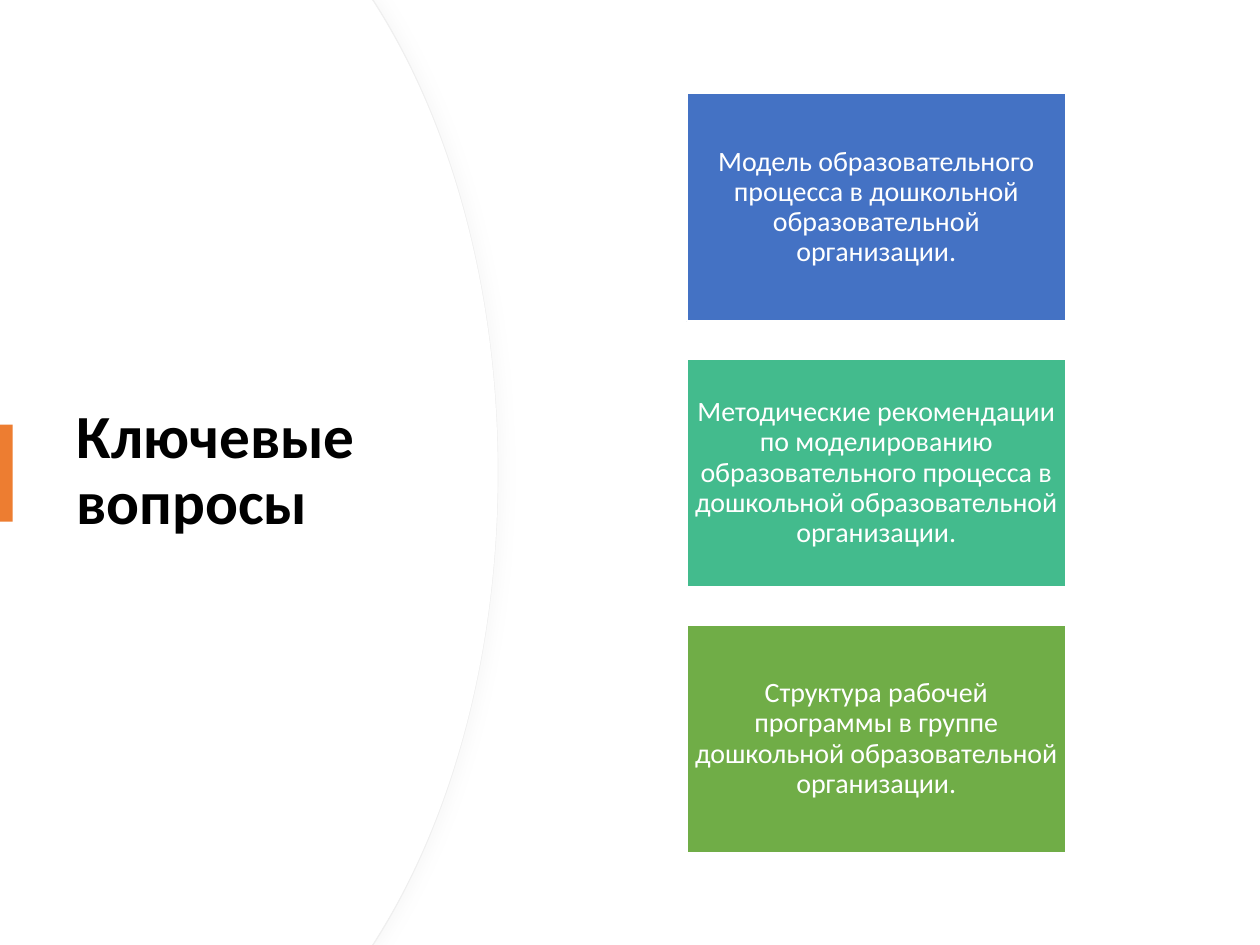
from lxml import etree
from pptx import Presentation
from pptx.dml.color import RGBColor
from pptx.enum.shapes import MSO_SHAPE as Shape
from pptx.enum.text import MSO_ANCHOR as Anchor, PP_ALIGN as Align
from pptx.oxml.ns import qn
from pptx.util import Inches, Pt

COLORS = {
    "white": "FFFFFF", "black": "000000", "outline": "EFEFEF", "shadow": "D9D9D9",
    "accent": "ED7D31", "blue": "4472C4", "teal": "43BB8D", "green": "70AD47",
}
FONT = "Calibri"
TITLE = "Ключевые вопросы"
QUESTIONS = [
    ("Модель образовательного процесса в дошкольной образовательной организации.", "blue"),
    ("Методические рекомендации по моделированию образовательного процесса "
     "в дошкольной образовательной организации.", "teal"),
    ("Структура рабочей программы в группе дошкольной образовательной организации.", "green"),
]
CARD_LEFT, CARD_TOP, CARD_WIDTH, CARD_HEIGHT, CARD_PITCH = 5.45, 0.74, 3.01, 1.81, 2.11
# Control points of the panel's two curved segments, by position in the outline
CURVES = {1: [(3.59, 1.02), (3.95, 2.32)], 2: [(3.95, 5.18), (3.59, 6.48)]}


def color(name):
    return RGBColor.from_string(COLORS[name])


def paint(shape, fill, line=None, width=1):
    shape.shadow.inherit = False
    shape.fill.solid()
    shape.fill.fore_color.rgb = color(fill)
    if line:
        shape.line.color.rgb = color(line)
        shape.line.width = Pt(width)
    else:
        shape.line.fill.background()


def write(shape, text, size, font_color, align, margins=None, bold=False):
    frame = shape.text_frame
    frame.word_wrap = True
    frame.vertical_anchor = Anchor.MIDDLE
    if margins is not None:
        frame.margin_left = frame.margin_right = Inches(margins)
        frame.margin_top = frame.margin_bottom = Inches(margins)
    paragraph = frame.paragraphs[0]
    paragraph.alignment = align
    paragraph.line_spacing = 0.9
    run = paragraph.add_run()
    run.text = text
    run.font.name = FONT
    run.font.size = Pt(size)
    run.font.bold = bold
    run.font.color.rgb = color(font_color)


def add_curved_panel(slide, edge):
    shoulder = edge + 0.05
    points = [(edge, 0), (shoulder, 0.08), (3.95, 3.75), (shoulder, 7.42),
              (edge, 7.5), (0, 7.5)]
    builder = slide.shapes.build_freeform(0, 0)
    builder.add_line_segments([(Inches(x), Inches(y)) for x, y in points], close=True)
    panel = builder.convert_to_shape()

    # Bend the two long segments into cubic curves
    segments = list(panel.element.iter(qn("a:lnTo")))
    for index, controls in CURVES.items():
        segment = segments[index + 1]
        curve = etree.Element(qn("a:cubicBezTo"))
        for x, y in controls:
            etree.SubElement(curve, qn("a:pt"), x=str(Inches(x)), y=str(Inches(y)))
        curve.append(segment[0])
        segment.getparent().replace(segment, curve)
    return panel


def add_shadow(shape, blur, distance, opacity):
    effects = shape.element.spPr.find(qn("a:effectLst"))
    shadow = etree.SubElement(effects, qn("a:outerShdw"), blurRad=str(Pt(blur)),
                              dist=str(Pt(distance)), dir="0", algn="l", rotWithShape="0")
    shade = etree.SubElement(shadow, qn("a:srgbClr"), val=COLORS["shadow"])
    etree.SubElement(shade, qn("a:alpha"), val=str(opacity * 1000))


def main():
    presentation = Presentation()
    presentation.slide_width, presentation.slide_height = Inches(10), Inches(7.5)
    slide = presentation.slides.add_slide(presentation.slide_layouts[6])

    # Curved panel: outlined with a shadow, then a plain white face
    panel = add_curved_panel(slide, 2.96)
    paint(panel, "white", "outline", 0.75)
    add_shadow(panel, blur=7, distance=3, opacity=15)
    paint(add_curved_panel(slide, 2.95), "white")

    # Title and its accent bar
    title = slide.shapes.add_textbox(Inches(0.51), Inches(1.27), Inches(2.96), Inches(4.95))
    write(title, TITLE, 35, "black", Align.LEFT, bold=True)
    bar = slide.shapes.add_shape(Shape.RECTANGLE, 0, Inches(3.37), Inches(0.1), Inches(0.77))
    paint(bar, "accent")

    # Question cards
    for index, (text, fill) in enumerate(QUESTIONS):
        card = slide.shapes.add_shape(
            Shape.RECTANGLE, Inches(CARD_LEFT), Inches(CARD_TOP + index * CARD_PITCH),
            Inches(CARD_WIDTH), Inches(CARD_HEIGHT))
        paint(card, fill, "white")
        write(card, text, 16, "white", Align.CENTER, margins=0.06)

    presentation.save("out.pptx")


if __name__ == "__main__":
    main()
